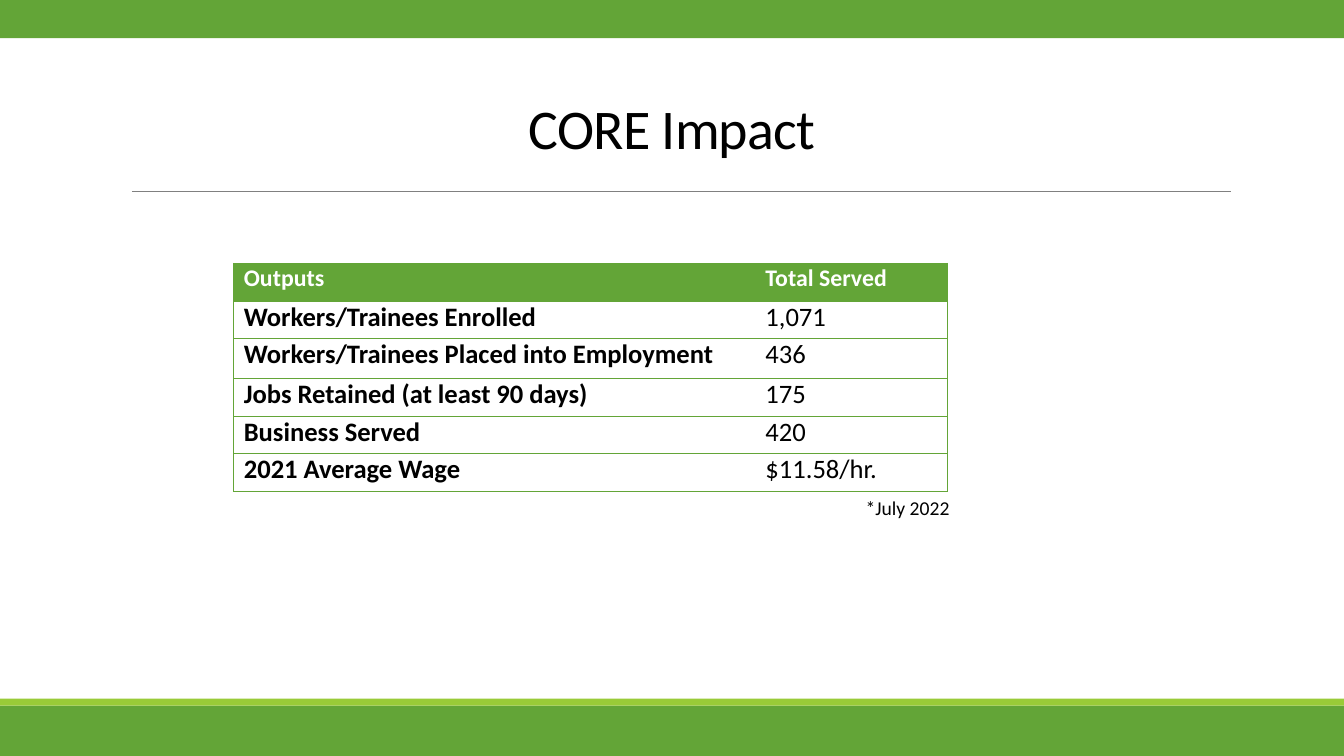
"""Build the CORE Impact slide with its table of outputs."""
import pptx
import pptx.dml.color
import pptx.enum.shapes
import pptx.enum.text
import pptx.oxml
import pptx.oxml.ns
import pptx.util

Pt = pptx.util.Pt
GREEN, LIME = "63A537", "99CB38"


def rgb(value):
    return pptx.dml.color.RGBColor.from_string(value)


def add_run(p, text, size, color="000000", bold=False):
    r = p.add_run()
    r.text = text
    r.font.name = "Calibri"
    r.font.size = Pt(size)
    r.font.bold = bold
    r.font.color.rgb = rgb(color)
    return r


prs = pptx.Presentation()
prs.slide_width, prs.slide_height = Pt(960), Pt(540)
s = prs.slides.add_slide(prs.slide_layouts[5])

for top, height, color in [(504, 36, GREEN), (499, 5, LIME), (0, 27.2, GREEN)]:
    sp = s.shapes.add_shape(pptx.enum.shapes.MSO_SHAPE.RECTANGLE, 0, Pt(top), Pt(960), Pt(height))
    sp.shadow.inherit = False
    sp.fill.solid()
    sp.fill.fore_color.rgb = rgb(color)
    sp.line.fill.background()

rule = s.shapes.add_connector(
    pptx.enum.shapes.MSO_CONNECTOR.STRAIGHT, Pt(94.3), Pt(136.6), Pt(879), Pt(136.6))
rule.line.color.rgb = rgb("808080")
rule.line.width = Pt(0.5)
rule._element.spPr.append(pptx.oxml.parse_xml(f"<a:effectLst {pptx.oxml.ns.nsdecls('a')}/>"))

title = s.shapes.title
title.left, title.top, title.width, title.height = 0, Pt(52.5), Pt(960), Pt(84)
tf = title.text_frame
tf.auto_size = pptx.enum.text.MSO_AUTO_SIZE.NONE
tf.vertical_anchor = pptx.enum.text.MSO_ANCHOR.MIDDLE
p = tf.paragraphs[0]
p.alignment = pptx.enum.text.PP_ALIGN.CENTER
p.line_spacing = 0.85
r = add_run(p, "CORE Impact", 40)
r.font._element.set("spc", "-50")

rows = [
    ("Outputs", "Total Served"),
    ("Workers/Trainees Enrolled", "1,071"),
    ("Workers/Trainees Placed into Employment", "436"),
    ("Jobs Retained (at least 90 days)", "175"),
    ("Business Served", "420"),
    ("2021 Average Wage", "$11.58/hr."),
]
table = s.shapes.add_table(len(rows), 2, Pt(167), Pt(188.2), Pt(509.6), Pt(162.75)).table
table.horz_banding = False
table.columns[0].width, table.columns[1].width = Pt(372.6), Pt(137)
for i, row in enumerate(rows):
    table.rows[i].height = Pt(28.5 if i == 2 else 26.85)
    for j, text in enumerate(row):
        cell = table.cell(i, j)
        cell.margin_left = cell.margin_right = Pt(7.2)
        cell.margin_top = cell.margin_bottom = 0
        cell.fill.solid()
        cell.fill.fore_color.rgb = rgb("FFFFFF" if i else GREEN)
        add_run(cell.text_frame.paragraphs[0], text, 19 if i else 17,
                "000000" if i else "FFFFFF", i == 0 or j == 0)
        inner = "R" if j == 0 else "L"
        for k, side in enumerate("LRTB"):
            paint = "<a:noFill/>" if side == inner else (
                f'<a:solidFill><a:srgbClr val="{GREEN}"/></a:solidFill>')
            cell._tc.tcPr.insert(k, pptx.oxml.parse_xml(
                f'<a:ln{side} {pptx.oxml.ns.nsdecls("a")} w="12700">{paint}</a:ln{side}>'))

note = s.shapes.add_textbox(Pt(576.7), Pt(350.6), Pt(108.7), Pt(24.5))
tf = note.text_frame
tf.word_wrap = True
tf.auto_size = pptx.enum.text.MSO_AUTO_SIZE.SHAPE_TO_FIT_TEXT
p = tf.paragraphs[0]
p.alignment = pptx.enum.text.PP_ALIGN.RIGHT
add_run(p, "*July 2022", 14)

prs.save("out.pptx")
